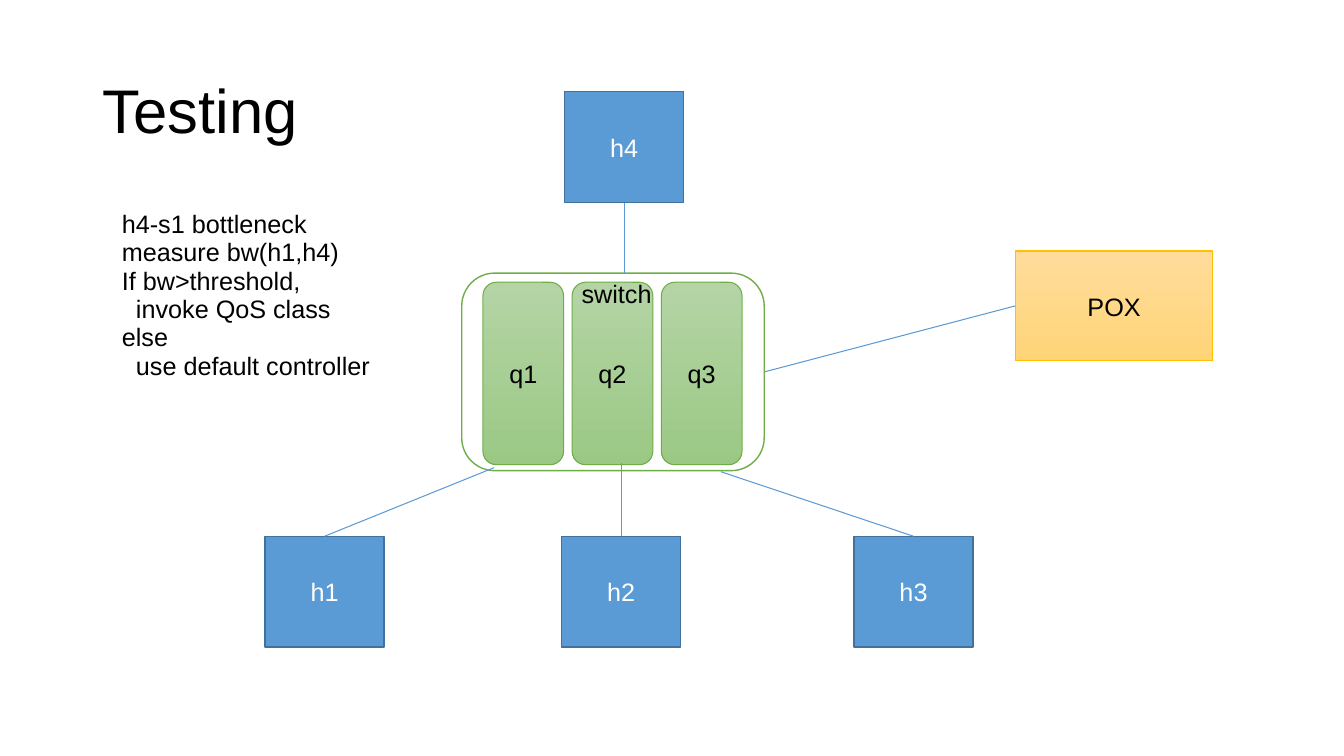
from lxml.etree import SubElement
from pptx import Presentation
from pptx.dml.color import RGBColor
from pptx.enum.shapes import MSO_CONNECTOR, MSO_SHAPE
from pptx.enum.text import MSO_ANCHOR, PP_ALIGN
from pptx.oxml.ns import qn
from pptx.util import Inches, Pt

FONT = "Arial"
BLACK = RGBColor(0x00, 0x00, 0x00)
WHITE = RGBColor(0xFF, 0xFF, 0xFF)
BLUE = RGBColor(0x5B, 0x9B, 0xD5)
DARK_BLUE = RGBColor(0x42, 0x71, 0x9B)
GREEN = RGBColor(0x70, 0xAD, 0x47)
GREEN_FADE = (RGBColor(0xB4, 0xD4, 0xA5), RGBColor(0x9B, 0xC9, 0x85))
GOLD = RGBColor(0xFF, 0xC0, 0x00)
GOLD_FADE = (RGBColor(0xFF, 0xDC, 0x9B), RGBColor(0xFF, 0xD4, 0x78))

# Each rule is (text, extra indent in inches)
RULES = [
    ("h4-s1 bottleneck", 0),
    ("measure bw(h1,h4)", 0),
    ("If bw>threshold,", 0),
    ("invoke QoS class", 0.14),
    ("else", 0),
    ("use default controller", 0.14),
]


def write(paragraph, text, color=BLACK, size=18):
    run = paragraph.add_run()
    run.text = text
    run.font.name = FONT
    run.font.size = Pt(size)
    run.font.color.rgb = color


def add_node(slide, kind, box, fill, outline, weight, label="", color=BLACK):
    """Draw a box; a pair of fill colours makes a vertical gradient."""
    node = slide.shapes.add_shape(kind, *map(Inches, box))
    node.shadow.inherit = False
    if isinstance(fill, RGBColor):
        node.fill.solid()
        node.fill.fore_color.rgb = fill
    else:
        node.fill.gradient()
        node.fill.gradient_angle = 270
        for stop, shade, position in zip(node.fill.gradient_stops, fill, (0, 1)):
            stop.color.rgb = shade
            stop.position = position
    node.line.color.rgb = outline
    node.line.width = Pt(weight)
    if label:
        node.text_frame.vertical_anchor = MSO_ANCHOR.MIDDLE
        paragraph = node.text_frame.paragraphs[0]
        paragraph.alignment = PP_ALIGN.CENTER
        write(paragraph, label, color)
    return node


def add_text_box(slide, box):
    text_box = slide.shapes.add_textbox(*map(Inches, box))
    text_box.text_frame.word_wrap = True
    return text_box.text_frame


def add_link(slide, node, side, start, end):
    """Join the given side of a node to a point on the switch."""
    link = slide.shapes.add_connector(
        MSO_CONNECTOR.STRAIGHT, *map(Inches, start + end))
    link.begin_connect(node, side)
    link.line.color.rgb = BLUE
    link.line.width = Pt(0.75)
    SubElement(link._element.spPr, qn("a:effectLst"))
    return link


def add_title(slide, box):
    title = slide.shapes.title
    title.left, title.top, title.width, title.height = map(Inches, box)
    title.text_frame.vertical_anchor = MSO_ANCHOR.MIDDLE
    paragraph = title.text_frame.paragraphs[0]
    paragraph.alignment = PP_ALIGN.LEFT
    paragraph.line_spacing = 0.9
    write(paragraph, "Testing", size=44)


def add_switch(slide, box):
    left, top, width, height = box
    switch = add_node(slide, MSO_SHAPE.ROUNDED_RECTANGLE, box, WHITE, GREEN, 1)
    # Queues at an equal pitch
    queue_width, pitch = 0.8, 0.885
    for i in range(3):
        queue_box = (left + 0.21 + i * pitch, top + 0.09, queue_width, 1.81)
        add_node(slide, MSO_SHAPE.ROUNDED_RECTANGLE, queue_box,
                 GREEN_FADE, GREEN, 0.75, f"q{i + 1}")
    caption = add_text_box(slide, (left + 1.09, top, 1.04, 0.4))
    write(caption.paragraphs[0], "switch")
    return switch


def add_host(slide, name, left, top, side, switch_point):
    width, height = 1.18, 1.1
    host = add_node(slide, MSO_SHAPE.RECTANGLE, (left, top, width, height),
                    BLUE, DARK_BLUE, 1, name, WHITE)
    edge = top if side == 0 else top + height
    add_link(slide, host, side, (left + width / 2, edge), switch_point)


def add_controller(slide, box, switch, switch_point):
    left, top, width, height = box
    controller = add_node(slide, MSO_SHAPE.RECTANGLE, box,
                          GOLD_FADE, GOLD, 0.75, "POX")
    link = add_link(slide, controller, 1, (left, top + height / 2), switch_point)
    link.end_connect(switch, 3)


def add_rules(slide, box):
    frame = add_text_box(slide, box)
    frame.margin_top = frame.margin_bottom = Inches(0.1)
    for i, (text, indent) in enumerate(RULES):
        paragraph = frame.add_paragraph() if i else frame.paragraphs[0]
        paragraph.line_spacing = 0.9
        paragraph.space_before = Pt(0.8 if i else 0)
        properties = paragraph._p.get_or_add_pPr()
        properties.set("marL", str(Inches(0.25 + indent)))
        properties.set("indent", str(Inches(-0.06)))
        write(paragraph, text)


def main():
    deck = Presentation()
    deck.slide_width, deck.slide_height = Inches(13.33), Inches(7.5)
    slide = deck.slides.add_slide(deck.slide_layouts[5])

    add_title(slide, (0.92, 0.4, 11.5, 1.45))

    # Network: switch, controller and hosts
    switch = add_switch(slide, (4.58, 2.71, 3, 1.96))
    add_controller(slide, (10.07, 2.49, 1.96, 1.09), switch, (7.58, 3.69))
    add_host(slide, "h4", 5.6, 0.91, 2, (6.19, 2.71))
    add_host(slide, "h1", 2.63, 5.32, 0, (4.9, 4.64))
    add_host(slide, "h2", 5.57, 5.32, 0, (6.16, 4.59))
    add_host(slide, "h3", 8.47, 5.32, 0, (7.15, 4.68))

    # Test procedure
    add_rules(slide, (0.92, 2, 11.5, 4.76))

    deck.save("out.pptx")


if __name__ == "__main__":
    main()
